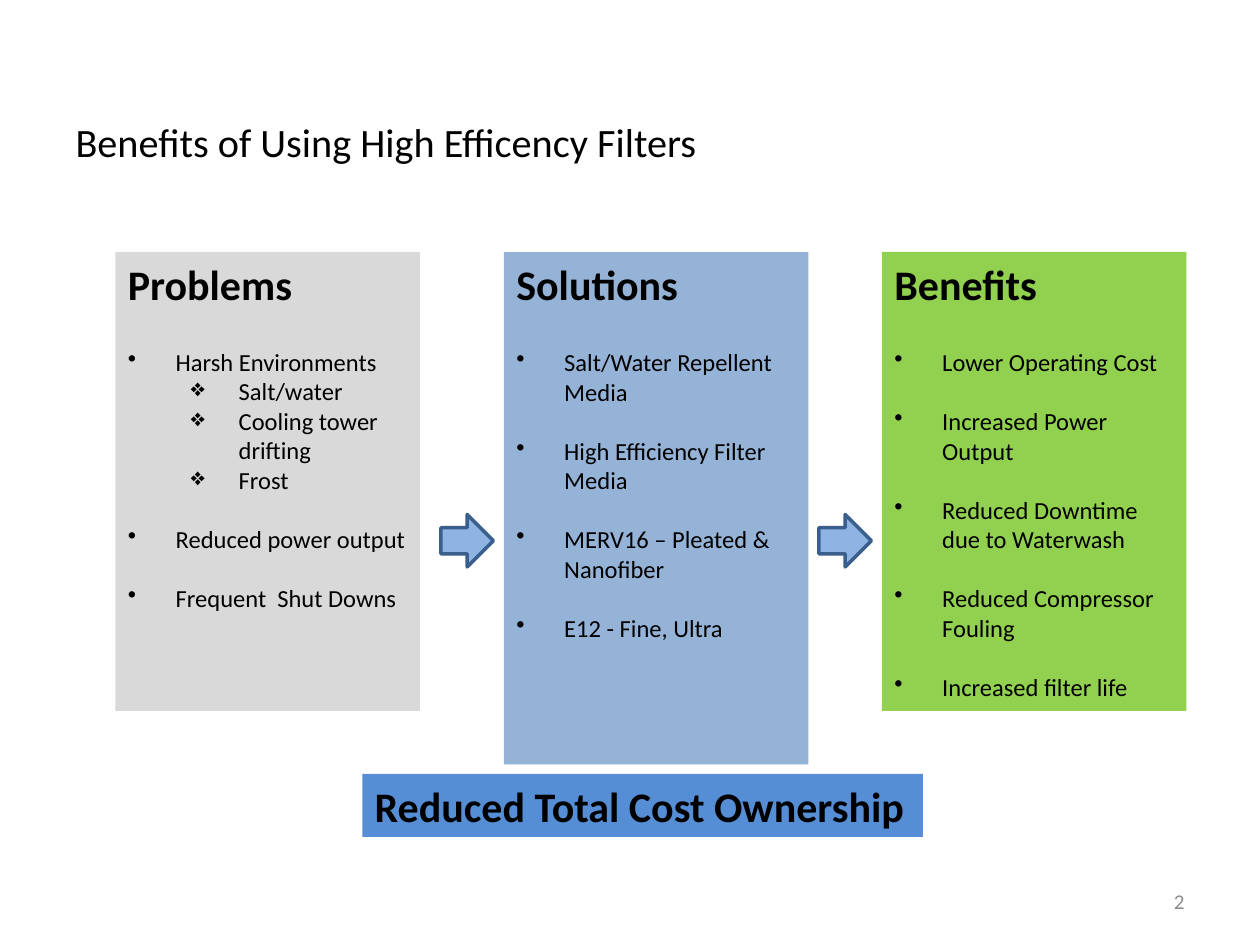
from lxml.etree import SubElement
from pptx import Presentation
from pptx.dml.color import RGBColor
from pptx.enum.shapes import MSO_SHAPE
from pptx.enum.text import MSO_ANCHOR, MSO_AUTO_SIZE, PP_ALIGN
from pptx.oxml.ns import qn
from pptx.util import Inches, Pt

GRID_COLUMNS, GRID_ROWS = 120, 90
SLIDE_WIDTH, SLIDE_HEIGHT = Inches(10), Inches(7.5)
COLUMN_WIDTH, COLUMN_TOP = 29, 24
ARROW_SIZE = 5

TITLE_FONT = {"name": "Calibri", "size": Pt(23), "bold": False}
HEADING_FONT = {"name": "Calibri", "size": Pt(24), "bold": True}
ITEM_FONT = {"name": "Calibri", "size": Pt(14), "bold": False}
NUMBER_FONT = {"name": "Calibri", "size": Pt(12), "bold": False}

# Heading, fill, left column, height in rows, (level, item) pairs
TOPICS = [
    ("Problems", "D9D9D9", 11, 43.7, [
        (0, "Harsh Environments"),
        (1, "Salt/water"),
        (1, "Cooling tower drifting"),
        (1, "Frost"),
        (0, "Reduced power output"),
        (0, "Frequent  Shut Downs"),
    ]),
    ("Solutions", "95B3D7", 48, 48.8, [
        (0, "Salt/Water Repellent Media"),
        (0, "High Efficiency Filter Media"),
        (0, "MERV16 – Pleated & Nanofiber"),
        (0, "E12 - Fine, Ultra"),
    ]),
    ("Benefits", "92D050", 84, 43.7, [
        (0, "Lower Operating Cost"),
        (0, "Increased Power Output"),
        (0, "Reduced Downtime due to Waterwash"),
        (0, "Reduced Compressor Fouling"),
        (0, "Increased filter life"),
    ]),
]
BULLETS = {0: ("•", 0.38), 1: ("❖", 0.88)}


def grid_box(left, top, width, height):
    """Turn grid columns and rows into slide lengths."""
    column, row = SLIDE_WIDTH / GRID_COLUMNS, SLIDE_HEIGHT / GRID_ROWS
    return (round(left * column), round(top * row),
            round(width * column), round(height * row))


def paint(color_format, color):
    color_format.rgb = RGBColor.from_string(color)


def write(paragraph, text, font_values, color="000000", align=PP_ALIGN.LEFT):
    paragraph.text = text
    paragraph.alignment = align
    for attribute, value in font_values.items():
        setattr(paragraph.font, attribute, value)
    paint(paragraph.font.color, color)


def add_bullet(paragraph, level):
    character, margin = BULLETS[level]
    properties = paragraph._p.get_or_add_pPr()
    properties.set("marL", str(Inches(margin)))
    properties.set("indent", str(-Inches(0.38)))
    SubElement(properties, qn("a:buChar"), char=character)


def add_filled_shape(slide, preset, box, fill):
    shape = slide.shapes.add_shape(preset, *grid_box(*box))
    shape.shadow.inherit = False
    shape.fill.solid()
    paint(shape.fill.fore_color, fill)
    shape.line.fill.background()
    return shape


def add_title(slide, box):
    title = slide.shapes.title
    title.left, title.top, title.width, title.height = grid_box(*box)
    title.text_frame.auto_size = MSO_AUTO_SIZE.NONE
    title.text_frame.vertical_anchor = MSO_ANCHOR.MIDDLE
    write(title.text_frame.paragraphs[0],
          "Benefits of Using High Efficency Filters", TITLE_FONT)


def add_topic(slide, box, heading, fill, items):
    panel = add_filled_shape(slide, MSO_SHAPE.RECTANGLE, box, fill)
    frame = panel.text_frame
    frame.word_wrap = True
    frame.vertical_anchor = MSO_ANCHOR.TOP
    write(frame.paragraphs[0], heading, HEADING_FONT)
    frame.paragraphs[0].space_after = Pt(22)
    for index, (level, item) in enumerate(items):
        paragraph = frame.add_paragraph()
        paragraph.level = level
        paragraph.space_before = Pt(17 if index and level == 0 else 0)
        add_bullet(paragraph, level)
        write(paragraph, item, ITEM_FONT)


def add_arrow(slide, box):
    arrow = add_filled_shape(slide, MSO_SHAPE.RIGHT_ARROW, box, "8EB4E3")
    paint(arrow.line.color, "3A5F8C")
    arrow.line.width = Pt(2)


def add_conclusion(slide, box):
    banner = add_filled_shape(slide, MSO_SHAPE.RECTANGLE, box, "558ED5")
    banner.text_frame.word_wrap = False
    banner.text_frame.vertical_anchor = MSO_ANCHOR.TOP
    write(banner.text_frame.paragraphs[0],
          "Reduced Total Cost Ownership", HEADING_FONT)


def add_page_number(slide, box):
    frame = slide.shapes.add_textbox(*grid_box(*box)).text_frame
    frame.word_wrap = True
    frame.vertical_anchor = MSO_ANCHOR.MIDDLE
    write(frame.paragraphs[0], "2", NUMBER_FONT, "8C8C8C", PP_ALIGN.RIGHT)


def main():
    presentation = Presentation()
    presentation.slide_width = SLIDE_WIDTH
    presentation.slide_height = SLIDE_HEIGHT
    slide = presentation.slides.add_slide(presentation.slide_layouts[5])

    add_page_number(slide, (86, 83.4, 28, 4.8))
    add_title(slide, (6, 6, 108, 15))
    for heading, fill, left, height, items in TOPICS:
        add_topic(slide, (left, COLUMN_TOP, COLUMN_WIDTH, height),
                  heading, fill, items)
    for _, _, next_left, _, _ in TOPICS[1:]:
        add_arrow(slide, (next_left - ARROW_SIZE - 1, 49, ARROW_SIZE, ARROW_SIZE))
    add_conclusion(slide, (34.5, 73.7, 53.4, 6))
    presentation.save("out.pptx")


if __name__ == "__main__":
    main()
